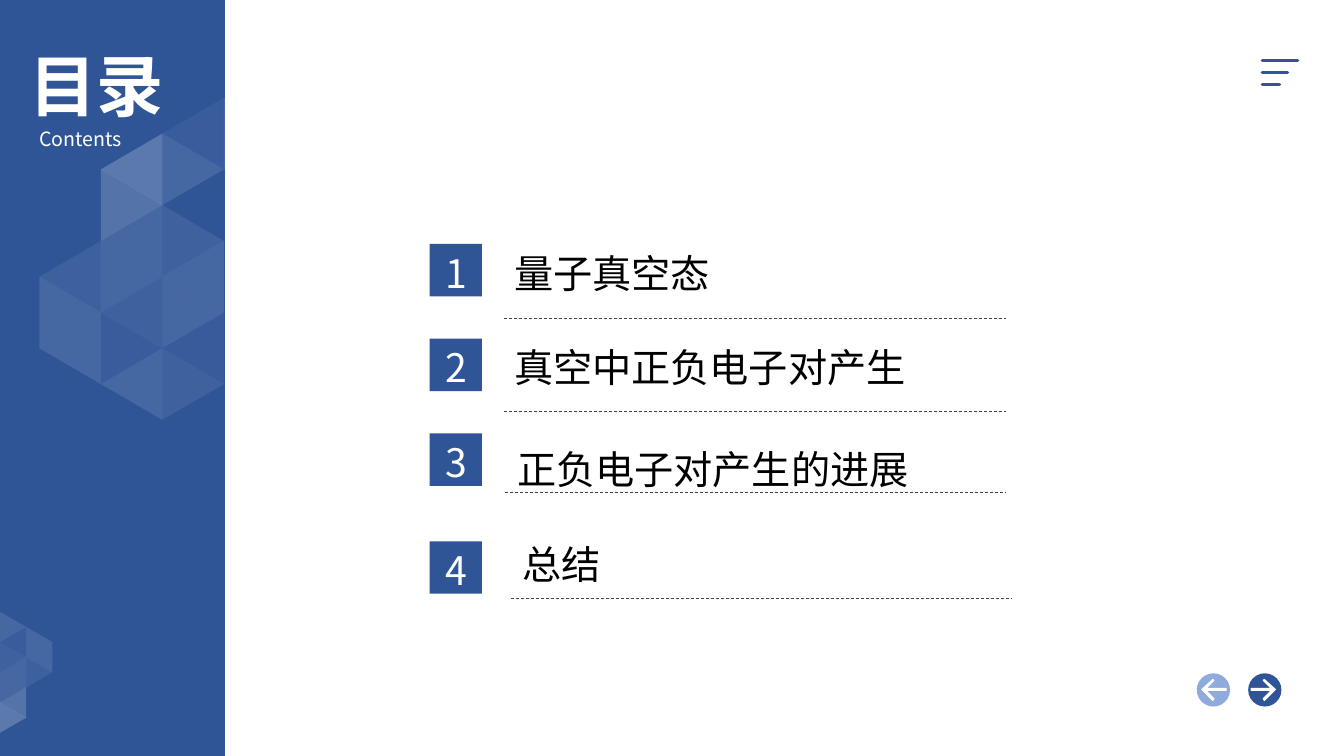
from lxml import etree
from pptx import Presentation
from pptx.dml.color import RGBColor
from pptx.enum.dml import MSO_LINE
from pptx.enum.shapes import MSO_CONNECTOR, MSO_SHAPE
from pptx.enum.text import MSO_AUTO_SIZE, PP_ALIGN
from pptx.oxml.ns import qn
from pptx.util import Inches, Pt

RECTANGLE, OVAL, TRIANGLE = MSO_SHAPE.RECTANGLE, MSO_SHAPE.OVAL, MSO_SHAPE.ISOSCELES_TRIANGLE
STRAIGHT, DASH = MSO_CONNECTOR.STRAIGHT, MSO_LINE.DASH
LEFT, CENTER = PP_ALIGN.LEFT, PP_ALIGN.CENTER
FIT_SHAPE = MSO_AUTO_SIZE.SHAPE_TO_FIT_TEXT

NAVY, PALE_BLUE, WHITE, BLACK, GREY = "2F5597", "8FAADC", "FFFFFF", "000000", "404040"
SANS, SERIF = "Noto Sans CJK SC", "Times New Roman"

# number, number top, title, title left, title top, rule left, rule right, rule y
ENTRIES = [
    ("1", 2.42, "量子真空态", 5, 2.42, 5, 9.98, 3.16),
    ("2", 3.36, "真空中正负电子对产生", 5, 3.36, 5, 9.98, 4.08),
    ("3", 4.3, "正负电子对产生的进展", 5.03, 4.37, 5.01, 9.98, 4.88),
    ("4", 5.37, "总结", 5.08, 5.31, 5.07, 10.04, 5.94),
]
# text, left, top, height, size, bold
HEADINGS = [("目录", 0.05, 0.39, 0.91, 48, True), ("Contents", -0.11, 1.21, 0.34, 14, False)]
# (column, row, opacity in percent) of each triangle in a lattice
LARGE_TRIANGLES = [
    (1, 6, 5), (1, 7, 11), (1, 4, 11), (1, 5, 8), (2, 7, 8), (0, 6, 11),
    (2, 5, 11), (2, 6, 4), (0, 5, 11), (2, 0, 5), (2, 1, 11), (2, 4, 11),
    (2, 3, 8), (1, 1, 21), (3, 0, 11), (1, 3, 11), (1, 2, 18), (0, 4, 7),
]
SMALL_TRIANGLES = [
    (0, 1, 5), (0, 0, 11), (0, 3, 11), (0, 2, 8), (1, 1, 11),
    (1, 2, 11), (0, 6, 21), (0, 4, 11), (0, 5, 18), (1, 3, 7),
]
# triangles, left, top, base, height, parity of the cells that point right
LATTICES = [
    (LARGE_TRIANGLES, 0.34, 1.02, 0.71, 0.61, 1),
    (SMALL_TRIANGLES, -0.02, 6.09, 0.3, 0.26, 0),
]
MENU_LEFT, MENU_TOP, MENU_STEP = 12.52, 0.6, 0.12
MENU_WIDTHS = [0.35, 0.25, 0.17]
# circle left, colour, arrow tail x, direction
BUTTONS = [(11.87, PALE_BLUE, 12.16, -1), (12.38, NAVY, 12.41, 1)]
BUTTON_TOP, BUTTON_SIZE, ARROW_Y = 6.68, 0.33, 6.84
# distance from the tail, distance from the axis
ARROW_OUTLINE = [
    (0.12, 0.09), (0.13, 0.11), (0.24, 0), (0.13, -0.1), (0.12, -0.09),
    (0.2, -0.01), (0, -0.01), (0, 0.01), (0.2, 0.01),
]


def color(value):
    return RGBColor.from_string(value)


def paint(shape, fill):
    """Give a shape a plain fill with no line and no shadow."""
    shape.shadow.inherit = False
    shape.fill.solid()
    shape.fill.fore_color.rgb = color(fill)
    shape.line.fill.background()


def add_block(slide, kind, left, top, width, height, fill):
    shape = slide.shapes.add_shape(
        kind, Inches(left), Inches(top), Inches(width), Inches(height))
    paint(shape, fill)
    return shape


def add_text(slide, text, left, top, width, height, size, font, ink, align, bold=False):
    box = slide.shapes.add_textbox(Inches(left), Inches(top), Inches(width), Inches(height))
    frame = box.text_frame
    frame.word_wrap = True
    frame.auto_size = FIT_SHAPE
    paragraph = frame.paragraphs[0]
    paragraph.alignment = align
    run = paragraph.add_run()
    run.text = text
    run.font.name = font
    run.font.size = Pt(size)
    run.font.bold = bold
    run.font.color.rgb = color(ink)
    east_asian = etree.SubElement(run.font._element, qn("a:ea"))
    east_asian.set("typeface", SANS)


def add_rule(slide, left, right, y, ink, weight):
    line = slide.shapes.add_connector(STRAIGHT, Inches(left), Inches(y), Inches(right), Inches(y))
    line.line.color.rgb = color(ink)
    line.line.width = Pt(weight)
    etree.SubElement(line._element.spPr, qn("a:effectLst"))
    return line


def add_lattice(slide, triangles, left, top, base, height, right_parity):
    """Place sideways triangles, one height per column and half a base per row."""
    for column, row, opacity in triangles:
        triangle = add_block(slide, TRIANGLE, left + column * height,
                             top + row * base / 2, base, height, WHITE)
        triangle.rotation = 90 if (column + row) % 2 == right_parity else 270
        fill_color = triangle._element.spPr.find(qn("a:solidFill"))[0]
        etree.SubElement(fill_color, qn("a:alpha")).set("val", str(opacity * 1000))


def add_button(slide, left, fill, tail, direction):
    add_block(slide, OVAL, left, BUTTON_TOP, BUTTON_SIZE, BUTTON_SIZE, fill)
    points = [(Inches(tail + direction * along), Inches(ARROW_Y + across))
              for along, across in ARROW_OUTLINE]
    builder = slide.shapes.build_freeform(*points[0])
    builder.add_line_segments(points[1:], close=True)
    arrow = builder.convert_to_shape()
    paint(arrow, WHITE)
    arrow.line.color.rgb = color(WHITE)
    arrow.line.width = Pt(0.75)


def main():
    presentation = Presentation()
    presentation.slide_width = Inches(13.33)
    presentation.slide_height = Inches(7.5)
    slide = presentation.slides.add_slide(presentation.slide_layouts[6])

    add_block(slide, RECTANGLE, 0, 0, 2.23, 7.5, NAVY)
    for lattice in LATTICES:
        add_lattice(slide, *lattice)
    for text, left, top, height, size, bold in HEADINGS:
        add_text(slide, text, left, top, 1.82, height, size, SANS, WHITE, CENTER, bold)

    for number, number_top, title, left, top, rule_left, rule_right, rule_y in ENTRIES:
        add_block(slide, RECTANGLE, 4.26, number_top, 0.52, 0.52, NAVY)
        add_text(slide, number, 4.32, number_top, 0.39, 0.57, 28, SANS, WHITE, CENTER)
        add_text(slide, title, left, top, 4.97, 0.57, 28, SERIF, BLACK, LEFT)
        add_rule(slide, rule_left, rule_right, rule_y, GREY, 0.5).line.dash_style = DASH

    for index, width in enumerate(MENU_WIDTHS):
        bar = add_rule(slide, MENU_LEFT, MENU_LEFT + width,
                       MENU_TOP + index * MENU_STEP, NAVY, 2.5)
        bar.line._get_or_add_ln().set("cap", "rnd")
    for button in BUTTONS:
        add_button(slide, *button)

    presentation.save("out.pptx")


if __name__ == "__main__":
    main()
